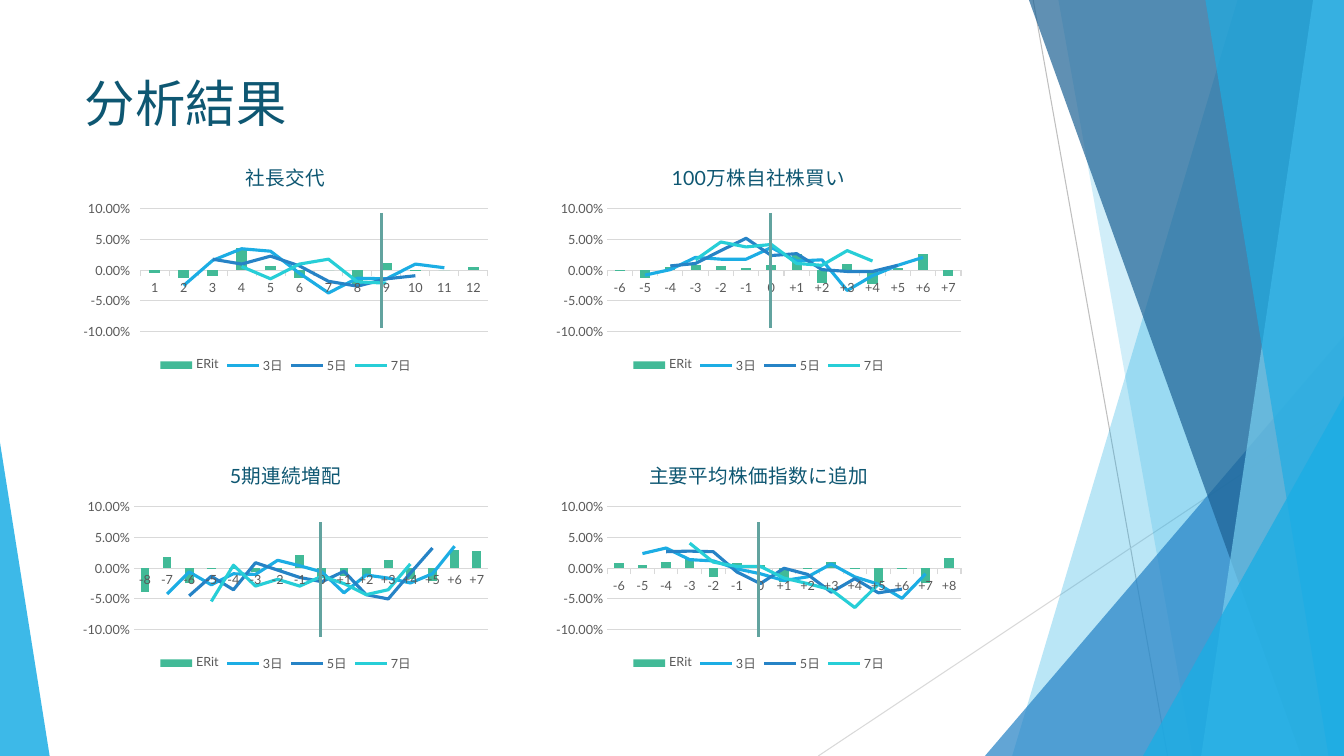
from dataclasses import dataclass

from lxml.etree import SubElement
from pptx import Presentation
from pptx.chart.data import CategoryChartData
from pptx.dml.color import RGBColor
from pptx.enum.chart import XL_CHART_TYPE as ChartType
from pptx.enum.chart import XL_LEGEND_POSITION as LegendPosition
from pptx.enum.chart import XL_MARKER_STYLE as Marker
from pptx.enum.chart import XL_TICK_MARK as Tick
from pptx.enum.shapes import MSO_CONNECTOR as Connector
from pptx.enum.shapes import MSO_SHAPE as Shape
from pptx.enum.text import MSO_ANCHOR as Anchor
from pptx.enum.text import PP_ALIGN as Align
from pptx.oxml.ns import qn
from pptx.util import Pt


@dataclass(frozen=True)
class Theme:
    font: str = "Lato"
    heading: str = "0E5772"
    label: str = "595959"
    grid: str = "D9D9D9"
    thread: str = "BFBFBF"
    event: str = "62A39F"
    bars: str = "42BA97"
    sky: str = "1CADE4"
    blue: str = "2683C6"
    navy: str = "1D6294"
    pale: str = "77CEEF"
    aqua: str = "27CED7"
    title_size: int = 36
    chart_title_size: int = 14
    label_size: int = 9


THEME = Theme()
WIDTH, HEIGHT = 960, 540
CHART_SIZE = (301, 165.6)
SERIES = ("ERit", "3日", "5日", "7日")
_ = None


def assign(target, values):
    for key, value in values.items():
        setattr(target, key, value)


def style_font(font, size, color):
    assign(font, {"name": THEME.font, "size": Pt(size), "bold": False})
    font.color.rgb = RGBColor.from_string(color)


def style_line(line, color, width):
    line.color.rgb = RGBColor.from_string(color)
    line.width = Pt(width)


def add_line(slide, start, end, color, width):
    line = slide.shapes.add_connector(Connector.STRAIGHT, *map(Pt, (*start, *end)))
    style_line(line.line, color, width)
    SubElement(line._element.spPr, qn("a:effectLst"))


def fill_facet(facet, color, opacity):
    facet.shadow.inherit = False
    facet.fill.solid()
    facet.fill.fore_color.rgb = RGBColor.from_string(color)
    facet.line.fill.background()
    tint = facet._element.spPr.find(f".//{qn('a:srgbClr')}")
    SubElement(tint, qn("a:alpha"), val=str(opacity * 1000))


def add_band(slide, box, top_x, bottom_x, color, opacity):
    """Band from a slanted left edge to the right side of the box."""
    left, top, width, height = box
    right, bottom = left + width, top + height
    outline = slide.shapes.build_freeform(Pt(top_x), Pt(top))
    corners = ((right, top), (right, bottom), (bottom_x, bottom))
    outline.add_line_segments([(Pt(x), Pt(y)) for x, y in corners])
    fill_facet(outline.convert_to_shape(), color, opacity)


def add_wedge(slide, box, apex, color, opacity):
    wedge = slide.shapes.add_shape(Shape.ISOSCELES_TRIANGLE, *map(Pt, box))
    wedge.adjustments[0] = apex
    fill_facet(wedge, color, opacity)


def add_facets(slide, box):
    left, top, width, height = box
    right, bottom = left + width, top + height
    # Thin threads
    add_line(slide, (738, top), (834, bottom), THEME.thread, 0.75)
    add_line(slide, (right, 290), (584.5, bottom), THEME.grid, 0.75)
    # Overlapping translucent facets
    add_band(slide, box, 884, 723, THEME.sky, 30)
    add_band(slide, box, 756, 852, THEME.sky, 20)
    add_wedge(slide, (703.5, 240, right - 703.5, bottom - 240), 1, THEME.blue, 72)
    add_band(slide, box, 735, 929.5, THEME.navy, 70)
    add_band(slide, box, 938, 858, THEME.pale, 70)
    add_band(slide, box, 861, 949, THEME.sky, 65)
    add_wedge(slide, (816.5, 283, right - 816.5, bottom - 283), 1, THEME.sky, 80)
    add_wedge(slide, (left, 316, 35.5, bottom - 316), 0, THEME.sky, 85)


def add_title(slide, box, text):
    title = slide.shapes.title
    assign(title, dict(zip(("left", "top", "width", "height"), map(Pt, box))))
    frame = title.text_frame
    assign(frame, {"text": text, "vertical_anchor": Anchor.TOP, "word_wrap": True})
    frame.paragraphs[0].alignment = Align.LEFT
    style_font(frame.paragraphs[0].runs[0].font, THEME.title_size, THEME.heading)


def move_to_lines(chart):
    """Turn every series after the first into a line on the same axes."""
    bars = chart.plots[0]._element
    lines = bars.makeelement(qn("c:lineChart"))
    bars.addnext(lines)
    SubElement(lines, qn("c:grouping"), val="standard")
    SubElement(lines, qn("c:varyColors"), val="0")
    for series in bars.findall(qn("c:ser"))[1:]:
        for bar_only in series.findall(qn("c:invertIfNegative")):
            series.remove(bar_only)
        lines.append(series)
    SubElement(lines, qn("c:marker"), val="1")
    for axis in bars.findall(qn("c:axId")):
        SubElement(lines, qn("c:axId"), val=axis.get("val"))


def set_layout(parent, position, **parts):
    for old in parent.findall(qn("c:layout")):
        parent.remove(old)
    layout = parent.makeelement(qn("c:layout"))
    parent.insert(position, layout)
    manual = SubElement(layout, qn("c:manualLayout"))
    for tag, value in parts.items():
        SubElement(manual, qn(f"c:{tag}"), val=str(value))


def style_axes(chart, category_tick, value_tick):
    categories, values = chart.category_axis, chart.value_axis
    assign(categories, {"major_tick_mark": category_tick, "minor_tick_mark": Tick.NONE,
                        "has_major_gridlines": False})
    assign(values, {"major_tick_mark": value_tick, "minor_tick_mark": Tick.NONE,
                    "minimum_scale": -0.1, "maximum_scale": 0.1, "major_unit": 0.05,
                    "has_major_gridlines": True})
    assign(values.tick_labels, {"number_format": "0.00%", "number_format_is_linked": False})
    style_line(categories.format.line, THEME.grid, 0.75)
    style_line(values.major_gridlines.format.line, THEME.grid, 0.75)
    values.format.line.fill.background()
    for axis in (categories, values):
        style_font(axis.tick_labels.font, THEME.label_size, THEME.label)


def add_event_chart(slide, box, title, categories, returns, event,
                    category_tick=Tick.OUTSIDE, value_tick=Tick.NONE):
    left, top, width, height = box
    data = CategoryChartData(number_format="0.00%")
    data.categories = categories
    for name, values in zip(SERIES, returns):
        data.add_series(name, values)
    chart = slide.shapes.add_chart(ChartType.COLUMN_CLUSTERED, *map(Pt, box), data).chart
    style_font(chart.font, THEME.label_size, THEME.label)

    # Heading, legend and plot position
    assign(chart, {"has_title": True, "has_legend": True})
    heading = chart.chart_title.text_frame
    heading.text = title
    style_font(heading.paragraphs[0].runs[0].font, THEME.chart_title_size, THEME.heading)
    assign(chart.legend, {"position": LegendPosition.BOTTOM, "include_in_layout": False})
    style_font(chart.legend.font, THEME.label_size, THEME.label)
    inset = 0.155 if value_tick == Tick.OUTSIDE else 0.14
    set_layout(chart._chartSpace.chart.plotArea, 0, layoutTarget="inner", xMode="edge",
               yMode="edge", x=inset, y=0.27, w=0.98 - inset, h=0.53)
    style_axes(chart, category_tick, value_tick)

    # Daily bars and moving averages
    move_to_lines(chart)
    bars, averages = chart.plots
    assign(bars, {"gap_width": 150, "vary_by_categories": False})
    bar_fill = bars.series[0].format.fill
    bar_fill.solid()
    bar_fill.fore_color.rgb = RGBColor.from_string(THEME.bars)
    for average, color in zip(averages.series, (THEME.sky, THEME.blue, THEME.aqua)):
        average.smooth = False
        average.marker.style = Marker.NONE
        style_line(average.format.line, color, 2.25)

    # Event day
    x, y = left + event[0], top + event[1]
    add_line(slide, (x, y), (x, y + 82), THEME.event, 2.25)


def days(first, last):
    return [f"{day:+d}" if day else "0" for day in range(first, last + 1)]


PRESIDENT = (
    (-.004, -.012, -.009, .037, .007, -.012, 0, -.025, .011, -.001, 0, .005),
    (_, -.025, .016, .035, .031, -.005, -.037, -.013, -.014, .01, .004, _),
    (_, _, .018, .01, .023, .007, -.018, -.026, -.014, -.009, _, _),
    (_, _, _, .006, -.014, .01, .018, -.019, -.021, _, _, _))
BUYBACK = (
    (-.002, -.013, .006, .008, .007, .003, .008, .027, -.02, .01, -.023, .004, .027, -.01),
    (_, -.008, .001, .021, .018, .018, .037, .015, .017, -.033, -.009, .008, .021, _),
    (_, _, .007, .011, .032, .052, .024, .027, .001, -.002, -.002, .008, _, _),
    (_, _, _, .017, .046, .038, .042, .011, .008, .032, .015, _, _, _))
DIVIDEND = (
    (-.038, .019, -.024, -.002, -.001, -.006, -.003, .021, -.014, -.013, -.013, .014, -.017, -.021, .03, .028),
    (_, -.042, -.006, -.027, -.009, -.01, .013, .004, -.006, -.04, -.011, -.016, -.024, -.009, .036, _),
    (_, _, -.045, -.013, -.035, .009, -.003, -.015, -.022, -.005, -.043, -.05, -.008, .033, _, _),
    (_, _, _, -.054, .005, -.029, -.018, -.029, -.013, -.025, -.043, -.035, .007, _, _, _))
INDEX = (
    (.009, .005, .011, .017, -.014, .009, .005, -.022, -.002, .011, -.001, -.024, -.001, -.024, .016),
    (_, .024, .033, .014, .012, -.001, -.009, -.02, -.014, .007, -.014, -.026, -.049, -.009, _),
    (_, _, .027, .028, .027, -.006, -.025, 0, -.01, -.039, -.017, -.04, -.034, _, _),
    (_, _, _, .041, .01, .003, .003, -.016, -.025, -.035, -.064, -.026, _, _, _))
EVENTS = (
    ("社長交代", [str(n) for n in range(1, 13)], PRESIDENT, (219, 47.5), Tick.OUTSIDE, Tick.OUTSIDE),
    ("100万株自社株買い", days(-6, 7), BUYBACK, (159, 47.5)),
    ("5期連続増配", days(-8, 7), DIVIDEND, (175.5, 55.5), Tick.NONE),
    ("主要平均株価指数に追加", days(-6, 8), INDEX, (150.5, 55.5)))


def add_results(slide, box):
    left, top, width, height = box
    chart_width, chart_height = CHART_SIZE
    for index, event in enumerate(EVENTS):
        row, column = divmod(index, 2)
        x = left + column * (width - chart_width)
        y = top + row * (height - chart_height)
        add_event_chart(slide, (x, y, *CHART_SIZE), *event)


def main():
    deck = Presentation()
    assign(deck, {"slide_width": Pt(WIDTH), "slide_height": Pt(HEIGHT)})
    slide = deck.slides.add_slide(deck.slide_layouts[5])
    add_facets(slide, (0, 0, WIDTH, HEIGHT))
    add_title(slide, (53.5, 48, 677, 104), "分析結果")
    add_results(slide, (53.5, 104.5, 639, 378.5))
    deck.save("out.pptx")


if __name__ == "__main__":
    main()
